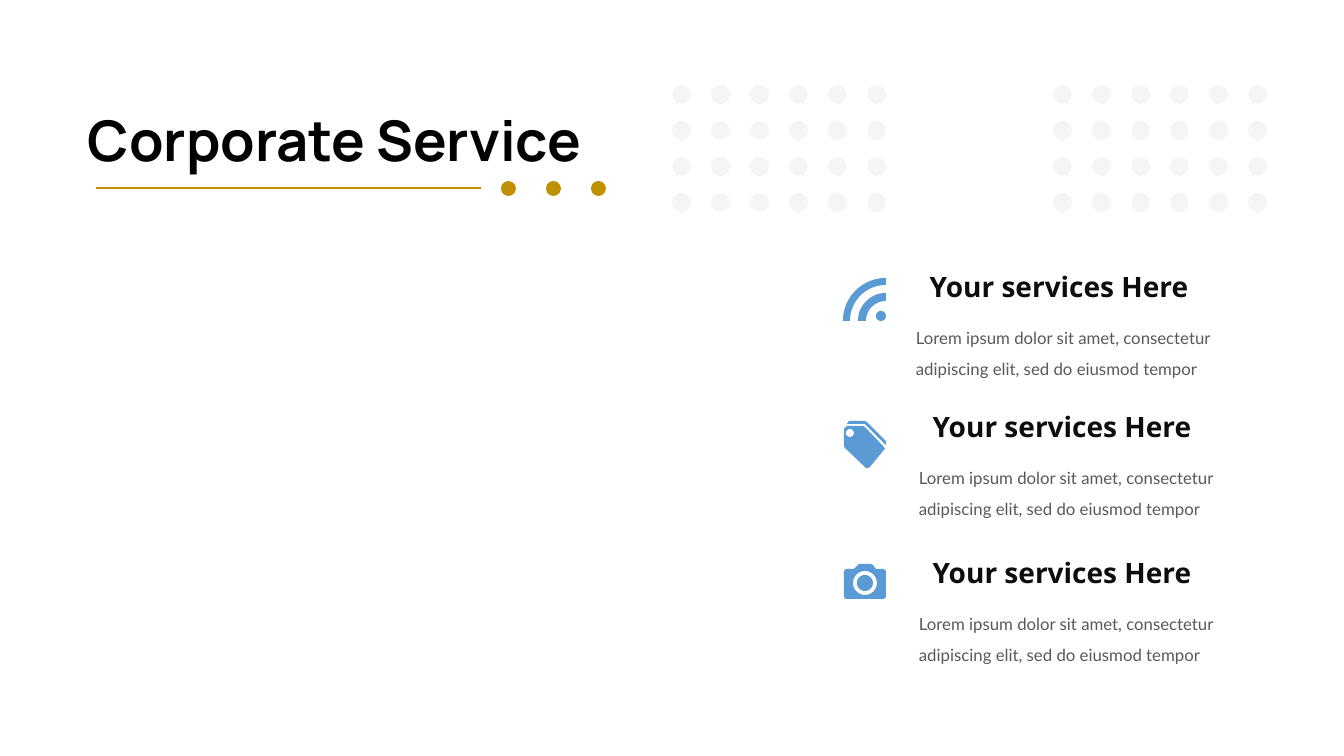
import math

import pptx
import pptx.dml.color
import pptx.enum.shapes
import pptx.enum.text
import pptx.util
from pptx.oxml.xmlchemy import OxmlElement

RGBColor = pptx.dml.color.RGBColor
PP_ALIGN = pptx.enum.text.PP_ALIGN

EMU_PER_PX = 914400 / 100.8
BLACK = RGBColor(0x00, 0x00, 0x00)
INK = RGBColor(0x0D, 0x0D, 0x0D)
GREY = RGBColor(0x59, 0x59, 0x59)
PALE = RGBColor(0xF5, 0xF5, 0xF5)
GOLD = RGBColor(0xBF, 0x90, 0x00)
BLUE = RGBColor(0x5B, 0x9B, 0xD5)

TITLE = {"name": "Manrope", "size": pptx.util.Pt(40), "bold": True}
HEADING = {"name": "Open Sans", "size": pptx.util.Pt(20), "bold": True}
BODY = {"name": "Lato", "size": pptx.util.Pt(12), "bold": False}

# Left and top of each service's text
SERVICES = [(906, 269), (909, 409), (909, 555)]
SERVICE_HEADING = "Your services Here"
SERVICE_BODY = ("Lorem ipsum dolor sit amet, consectetur "
                "adipiscing elit, sed do eiusmod tempor")


def px(n):
    return pptx.util.Emu(round(n * EMU_PER_PX))


def paint(sp, color):
    sp.shadow.inherit = False
    sp.fill.solid()
    sp.fill.fore_color.rgb = color
    sp.line.fill.background()


def add_dot(s, x, y, d, color):
    oval = pptx.enum.shapes.MSO_SHAPE.OVAL
    paint(s.shapes.add_shape(oval, px(x), px(y), px(d), px(d)), color)


def add_dot_grid(s, x, y):
    for row in range(4):
        for col in range(6):
            add_dot(s, x + 39 * col, y + 36 * row, 19, PALE)


def add_text(s, x, y, w, h, text, font, color, para=None, inset=True):
    sp = s.shapes.add_textbox(px(x), px(y), px(w), px(h))
    tf = sp.text_frame
    frame = {"word_wrap": True,
             "auto_size": pptx.enum.text.MSO_AUTO_SIZE.SHAPE_TO_FIT_TEXT}
    if not inset:
        frame.update(margin_left=0, margin_top=0, margin_right=0, margin_bottom=0)
    p = tf.paragraphs[0]
    r = p.add_run()
    r.text = text
    r.font.color.rgb = color
    for target, values in ((tf, frame), (p, para or {}), (r.font, font)):
        for name, value in values.items():
            setattr(target, name, value)


def add_rule(s, x1, x2, y, color):
    line = s.shapes.add_connector(pptx.enum.shapes.MSO_CONNECTOR.STRAIGHT,
                                  px(x1), px(y), px(x2), px(y))
    line.line.color.rgb = color
    line.line.width = pptx.util.Pt(1.5)
    line._element.spPr.append(OxmlElement("a:effectLst"))


def arc(cx, cy, radius, start=0, end=360, steps=36):
    angles = [math.radians(start + (end - start) * i / steps)
              for i in range(steps + 1)]
    return [(cx + radius * math.cos(a), cy + radius * math.sin(a)) for a in angles]


def add_icon(s, contours):
    builder = None
    for contour in contours:
        start, *rest = [(px(x), px(y)) for x, y in contour]
        if builder is None:
            builder = s.shapes.build_freeform(*start, scale=1.0)
        else:
            builder.move_to(*start)
        builder.add_line_segments(rest, close=True)
    paint(builder.convert_to_shape(), BLUE)


def signal_icon():
    bands = [arc(886, 321, outer, 180, 270) + arc(886, 321, inner, 270, 180)
             for outer, inner in ((43, 36), (28, 20))]
    return bands + [arc(881, 316, 5)]


def tag_icon():
    back = [(847, 424), (849, 421), (865, 421), (867, 422), (886, 441),
            (886, 445), (865, 424)]
    front = [(844, 429), (847, 426), (863, 426), (865, 427), (884, 447),
             (885, 449), (884, 450), (870, 467), (868, 468), (866, 468),
             (845, 448), (844, 446)]
    return [back, front, arc(850, 433, 4)]


def camera_icon():
    case = [(844, 571), (846, 569), (854, 569), (857, 566), (859, 564),
            (871, 564), (873, 565), (876, 569), (884, 569), (886, 571),
            (886, 597), (884, 599), (846, 599), (844, 597)]
    return [case, arc(865, 583, 12), arc(865, 583, 8)]


def main():
    prs = pptx.Presentation()
    prs.slide_width, prs.slide_height = px(1344), px(756)
    s = prs.slides.add_slide(prs.slide_layouts[6])

    # Services: icons, headings and descriptions
    for contours in (signal_icon(), tag_icon(), camera_icon()):
        add_icon(s, contours)
    for x, y in SERVICES:
        add_text(s, x, y, 306, 34, SERVICE_HEADING, HEADING, INK,
                 {"alignment": PP_ALIGN.CENTER}, inset=False)
        add_text(s, x, y + 44, 361, 68, SERVICE_BODY, BODY, GREY,
                 {"line_spacing": 1.5})

    # Title with its rule and dots
    add_text(s, 78, 101, 595, 78, "Corporate Service", TITLE, BLACK)
    for i in range(3):
        add_dot(s, 501 + 45 * i, 181, 15, GOLD)
    add_rule(s, 96, 481, 188, GOLD)

    # Background dot grids
    for x in (1053, 672):
        add_dot_grid(s, x, 85)

    prs.save("out.pptx")


if __name__ == "__main__":
    main()
